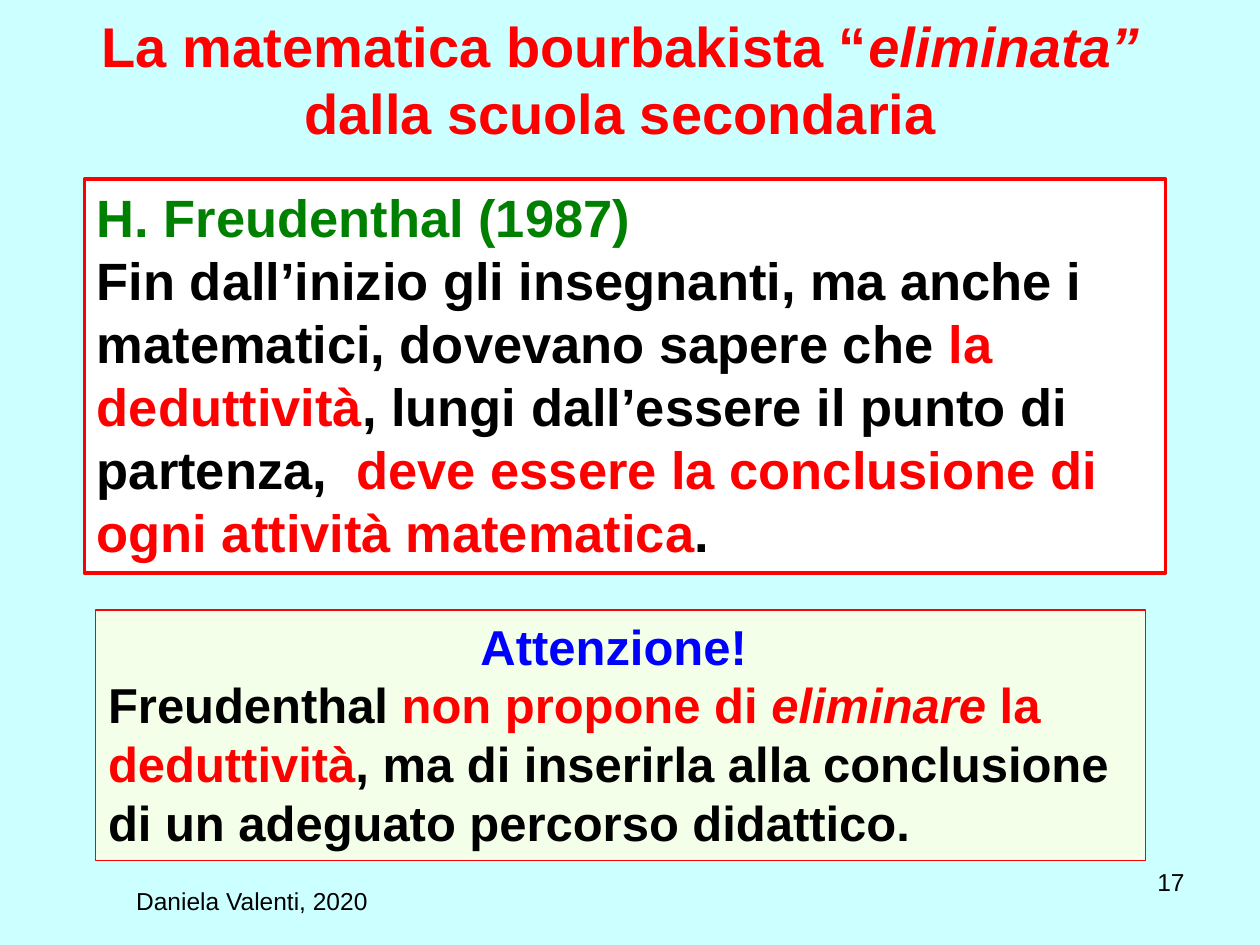
from dataclasses import dataclass
from typing import Optional

from pptx import Presentation
from pptx.dml.color import RGBColor
from pptx.enum.shapes import MSO_SHAPE as Preset
from pptx.enum.text import MSO_ANCHOR as Anchor, MSO_AUTO_SIZE as AutoSize, PP_ALIGN as Align
from pptx.util import Inches, Pt

COLORS = {
    "background": "CCFFFF",
    "red": "FF0000",
    "green": "008000",
    "blue": "0000FF",
    "black": "000000",
    "white": "FFFFFF",
    "pale": "F4FFEA",
}


@dataclass
class Span:
    text: str
    color: str = "black"
    italic: Optional[bool] = None


@dataclass
class Para:
    spans: list[Span]
    align: Align = Align.LEFT


@dataclass
class Panel:
    box: tuple[float, float, float, float]
    fill: str
    border: float
    size: int
    paras: list[Para]


@dataclass
class Footer:
    box: tuple[float, float, float, float]
    para: Para


def rgb(name: str) -> RGBColor:
    return RGBColor.from_string(COLORS[name])


def write(frame, paras: list[Para], size: int, bold: bool) -> None:
    frame.word_wrap = True
    for index, para in enumerate(paras):
        line = frame.add_paragraph() if index else frame.paragraphs[0]
        line.alignment = para.align
        line.font.name, line.font.size, line.font.bold = "Arial", Pt(size), bold
        for span in para.spans:
            run = line.add_run()
            run.text = span.text
            run.font.color.rgb = rgb(span.color)
            run.font.italic = span.italic


def draw_panel(slide, panel: Panel) -> None:
    rect = slide.shapes.add_shape(Preset.RECTANGLE, *map(Inches, panel.box))
    rect.shadow.inherit = False
    rect.fill.solid()
    rect.fill.fore_color.rgb = rgb(panel.fill)
    rect.line.color.rgb = rgb("red")
    rect.line.width = Pt(panel.border)
    rect.text_frame.vertical_anchor = Anchor.TOP
    write(rect.text_frame, panel.paras, panel.size, True)
    rect.text_frame.auto_size = AutoSize.SHAPE_TO_FIT_TEXT


def draw_footer(slide, footer: Footer) -> None:
    label = slide.shapes.add_textbox(*map(Inches, footer.box))
    write(label.text_frame, [footer.para], 14, False)


TITLE = Para([
    Span("La matematica bourbakista “", "red"),
    Span("eliminata”", "red", True),
    Span(" dalla scuola secondaria", "red"),
], Align.CENTER)

QUOTE = Panel((0.67, 1.42, 8.58, 3.13), "white", 2, 30, [
    Para([Span("H. Freudenthal (1987)", "green")]),
    Para([
        Span("Fin dall’inizio gli insegnanti, ma anche i matematici, dovevano sapere che "),
        Span("la deduttività", "red"),
        Span(", lungi dall’essere il punto di partenza,  "),
        Span("deve essere la conclusione di ogni attività matematica", "red"),
        Span("."),
    ]),
])

WARNING = Panel((0.76, 4.84, 8.33, 1.99), "pale", 0.75, 28, [
    Para([Span("Attenzione! ", "blue")], Align.CENTER),
    Para([
        Span("Freudenthal "),
        Span("non propone di ", "red"),
        Span("eliminare", "red", True),
        Span(" la deduttività", "red"),
        Span(", ma di inserirla alla conclusione di un adeguato percorso didattico."),
    ]),
])

FOOTERS = [
    Footer((7.17, 6.83, 2.33, 0.52), Para([Span("17")], Align.RIGHT)),
    Footer((0, 6.98, 4, 0.52), Para([Span("Daniela Valenti, 2020")], Align.CENTER)),
]


def main() -> None:
    deck = Presentation()
    deck.slide_width, deck.slide_height = Inches(10), Inches(7.5)
    slide = deck.slides.add_slide(deck.slide_layouts[5])
    slide.background.fill.solid()
    slide.background.fill.fore_color.rgb = rgb("background")

    title = slide.shapes.title
    title.left, title.top, title.width, title.height = map(Inches, (0.33, 0, 9.19, 1.25))
    title.text_frame.vertical_anchor = Anchor.MIDDLE
    title.text_frame.auto_size = AutoSize.NONE
    write(title.text_frame, [TITLE], 32, True)

    draw_panel(slide, QUOTE)
    for footer in FOOTERS:
        draw_footer(slide, footer)
    draw_panel(slide, WARNING)
    deck.save("out.pptx")


if __name__ == "__main__":
    main()
